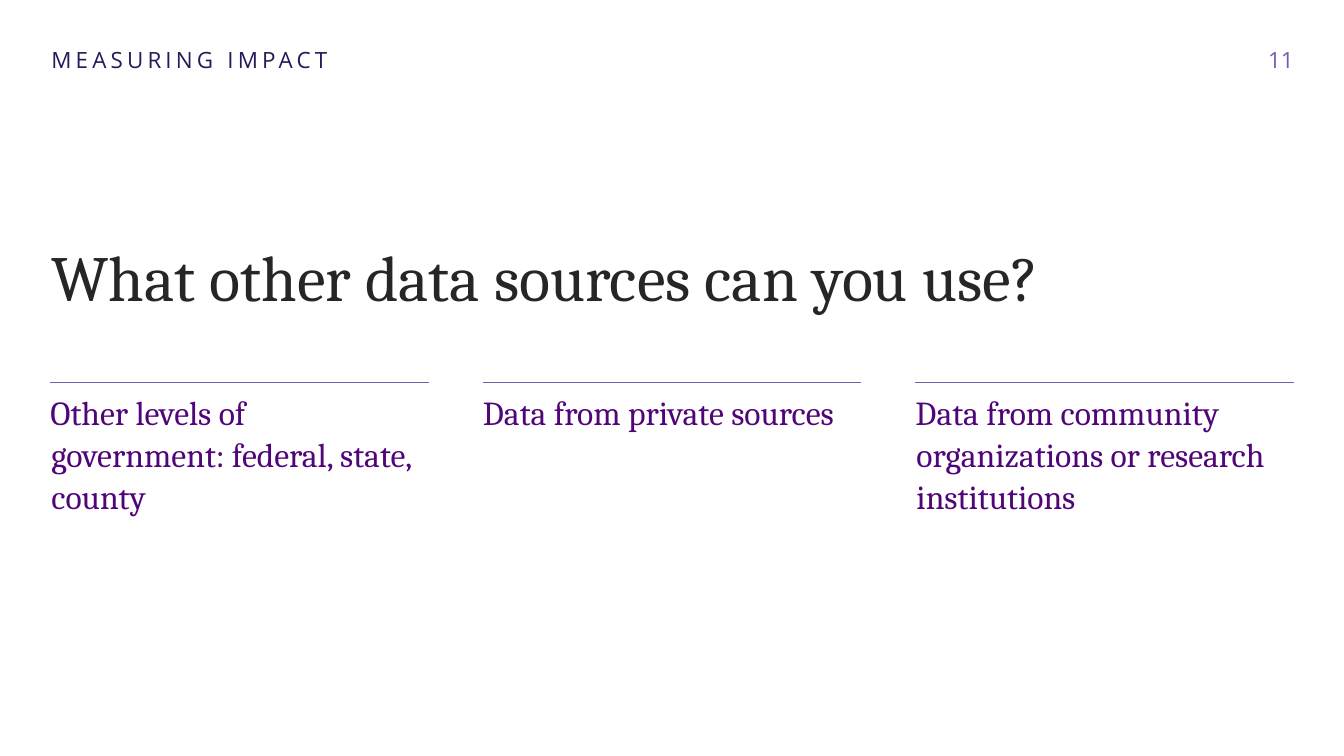
from lxml import etree
from pptx import Presentation
from pptx import util as u
from pptx.dml.color import RGBColor
from pptx.enum import shapes, text
from pptx.oxml.ns import qn

PX_PER_INCH = 100
SERIF, SANS = "Cambria", "Open Sans"
NAVY, VIOLET, PURPLE, CHARCOAL = "281A58", "785AB4", "500678", "262626"


def px(length):
    return u.Emu(length * u.Inches(1) // PX_PER_INCH)


def color(hex_string):
    return RGBColor.from_string(hex_string)


def add_text(slide, box, words, size, font, fill, align=text.PP_ALIGN.LEFT,
             anchor=text.MSO_ANCHOR.TOP, insets=(0, 0, 0, 0), margin=0,
             hanging=0, line_points=None, after=None, tracking=None):
    """Add one paragraph; box and insets run left, top, then across and down."""
    shape = slide.shapes.add_textbox(*map(px, box))
    frame = shape.text_frame
    frame.word_wrap = True
    frame.auto_size = text.MSO_AUTO_SIZE.SHAPE_TO_FIT_TEXT
    frame.vertical_anchor = anchor
    (frame.margin_left, frame.margin_top,
     frame.margin_right, frame.margin_bottom) = map(px, insets)
    paragraph = frame.paragraphs[0]
    paragraph.alignment = align
    if line_points:
        paragraph.line_spacing = u.Pt(line_points)
    if after:
        paragraph.space_after = u.Pt(after)
    properties = paragraph._p.get_or_add_pPr()
    properties.set("marL", str(px(margin)))
    properties.set("indent", str(px(-hanging)))
    run = paragraph.add_run()
    run.text = words
    run.font.size = u.Pt(size)
    run.font.name = font
    run.font.color.rgb = color(fill)
    if tracking:
        run._r.get_or_add_rPr().set("spc", str(tracking * 100))


def add_rule(slide, left, top, width):
    rule = slide.shapes.add_connector(
        shapes.MSO_CONNECTOR.STRAIGHT, px(left), px(top), px(left + width), px(top))
    rule.line.color.rgb = color(VIOLET)
    rule.line.width = u.Pt(0.5)
    etree.SubElement(rule._element.spPr, qn("a:effectLst"))


def add_header(slide, box, section, number):
    left, top, width, height = box
    number_width = 307
    add_text(slide, (left + width - number_width, top, number_width, height),
             number, 16, SANS, VIOLET, align=text.PP_ALIGN.RIGHT,
             anchor=text.MSO_ANCHOR.MIDDLE)
    add_text(slide, (left, top, 845, height), section, 16, SANS, NAVY,
             margin=1, tracking=3)


def add_title(slide, box, title):
    add_text(slide, box, title, 46, SERIF, CHARCOAL, margin=1, after=24)


def add_columns(slide, box, entries, gap=54):
    """Place equal columns, each with a rule above its text."""
    left, top, width, height = box
    column_width = (width - gap * (len(entries) - 1)) // len(entries)
    for index, entry in enumerate(entries):
        column_left = left + index * (column_width + gap)
        add_rule(slide, column_left, top, column_width)
        add_text(slide, (column_left, top + 3, column_width, height - 3),
                 entry, 24, SERIF, PURPLE, insets=(0, 5, 10, 5),
                 margin=1, hanging=1, line_points=30)


def main():
    presentation = Presentation()
    presentation.slide_width, presentation.slide_height = px(1333), px(750)
    slide = presentation.slides.add_slide(presentation.slide_layouts[6])
    slide.background.fill.solid()
    slide.background.fill.fore_color.rgb = color("FFFFFF")
    add_header(slide, (50, 46, 1233, 27), "MEASURING IMPACT", "11")
    add_title(slide, (50, 235, 1130, 77), "What other data sources can you use?")
    add_columns(slide, (50, 379, 1233, 139), [
        "Other levels of government: federal, state, county",
        "Data from private sources",
        "Data from community organizations or research institutions",
    ])
    presentation.save("out.pptx")


if __name__ == "__main__":
    main()
